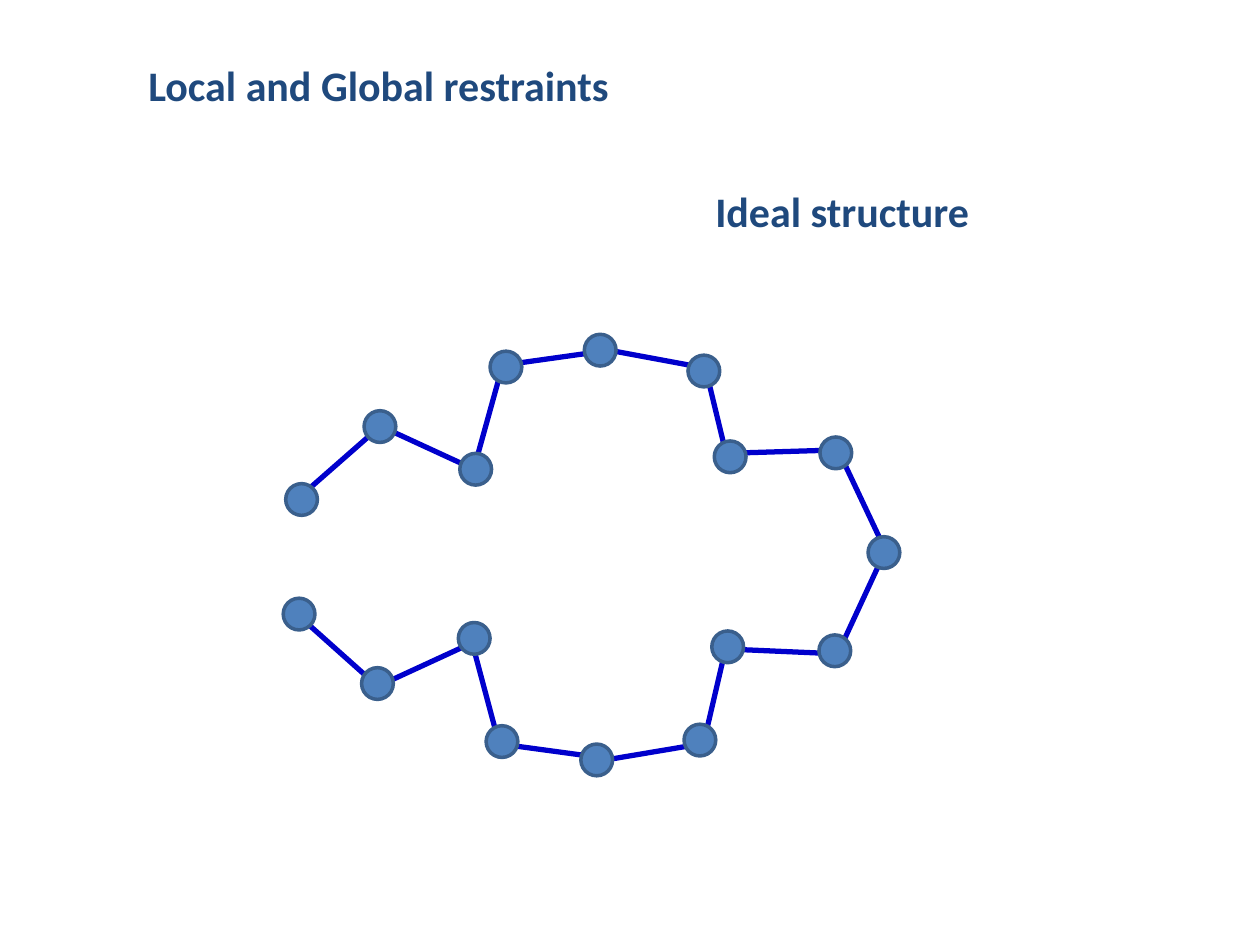
import pptx
import pptx.dml.color
import pptx.enum.shapes
import pptx.enum.text
import pptx.oxml
import pptx.oxml.ns
import pptx.util

Cm = pptx.util.Cm
BEAD_DIAMETER = 0.64
HEADING_FORMAT = {"name": "Calibri", "size": pptx.util.Pt(24), "bold": True}

LOWER_STRAND = [
    ((6.03, 12.38), (5.94, 12.34), (7.62, 13.84)),
    ((7.61, 13.78), (7.54, 13.87), (9.58, 12.93)),
    ((9.56, 12.87), (9.47, 12.78), (10.06, 14.99)),
    ((10.12, 14.95), (10.03, 14.99), (12.24, 15.29)),
    ((12.03, 15.32), (11.91, 15.37), (14.17, 14.99)),
    ((14.11, 14.92), (14.17, 15.04), (14.68, 12.85)),
    ((14.67, 13.04), (14.58, 13.08), (16.87, 13.18)),
    ((16.83, 13.12), (16.84, 13.28), (17.78, 11.25)),
]
UPPER_STRAND = [
    ((6.08, 10.07), (5.97, 10.08), (7.67, 8.59)),
    ((7.66, 8.6), (7.54, 8.53), (9.58, 9.47)),
    ((9.59, 9.46), (9.53, 9.53), (10.13, 7.37)),
    ((10.2, 7.4), (10.08, 7.37), (12.29, 7.06)),
    ((12.1, 7.06), (12.01, 7.01), (14.22, 7.42)),
    ((14.19, 7.48), (14.2, 7.34), (14.73, 9.53)),
    ((14.72, 9.21), (14.61, 9.14), (16.89, 9.07)),
    ((16.85, 9.13), (16.87, 9.02), (17.83, 11.05)),
]
TIP_BEAD = (17.82, 11.14)


def paint(color_format, color):
    """Set a colour format to a hex colour."""
    color_format.rgb = pptx.dml.color.RGBColor.from_string(color)


def outline(line, color, width):
    """Set the colour and width in points of a line."""
    paint(line.color, color)
    line.width = pptx.util.Pt(width)


def add_heading(slide, text, left, top, width):
    """Add a bold heading."""
    heading = slide.shapes.add_textbox(Cm(left), Cm(top), Cm(width), Cm(1.27))
    frame = heading.text_frame
    frame.word_wrap = True
    frame.auto_size = pptx.enum.text.MSO_AUTO_SIZE.SHAPE_TO_FIT_TEXT
    wording = frame.paragraphs[0].add_run()
    wording.text = text
    for attribute, value in HEADING_FORMAT.items():
        setattr(wording.font, attribute, value)
    paint(wording.font.color, "1F497D")


def add_bond(slide, start, end):
    """Add a straight bond between two points."""
    bond = slide.shapes.add_connector(
        pptx.enum.shapes.MSO_CONNECTOR.STRAIGHT, *map(Cm, start + end)
    )
    outline(bond.line, "0000CC", 3)
    properties = bond._element.find(pptx.oxml.ns.qn("p:spPr"))
    properties.append(
        pptx.oxml.parse_xml(f"<a:effectLst {pptx.oxml.ns.nsdecls('a')}/>")
    )


def add_bead(slide, center):
    """Add a round bead around its centre."""
    left, top = (Cm(position - BEAD_DIAMETER / 2) for position in center)
    bead = slide.shapes.add_shape(
        pptx.enum.shapes.MSO_SHAPE.OVAL, left, top, Cm(BEAD_DIAMETER), Cm(BEAD_DIAMETER)
    )
    bead.shadow.inherit = False
    bead.fill.solid()
    paint(bead.fill.fore_color, "4F81BD")
    outline(bead.line, "3A5F8C", 2)


def add_strand(slide, strand):
    """Add each bead of a strand over the bond that leaves it."""
    for center, start, end in strand:
        add_bond(slide, start, end)
        add_bead(slide, center)


def main():
    """Build the slide and save it."""
    presentation = pptx.Presentation()
    presentation.slide_width = Cm(25.4)
    presentation.slide_height = Cm(19.05)
    slide = presentation.slides.add_slide(presentation.slide_layouts[6])
    add_heading(slide, "Local and Global restraints", 2.74, 1.07, 13.13)
    for strand in (LOWER_STRAND, UPPER_STRAND):
        add_strand(slide, strand)
    add_bead(slide, TIP_BEAD)
    add_heading(slide, "Ideal structure", 14.17, 3.61, 6.98)
    presentation.save("out.pptx")


if __name__ == "__main__":
    main()
